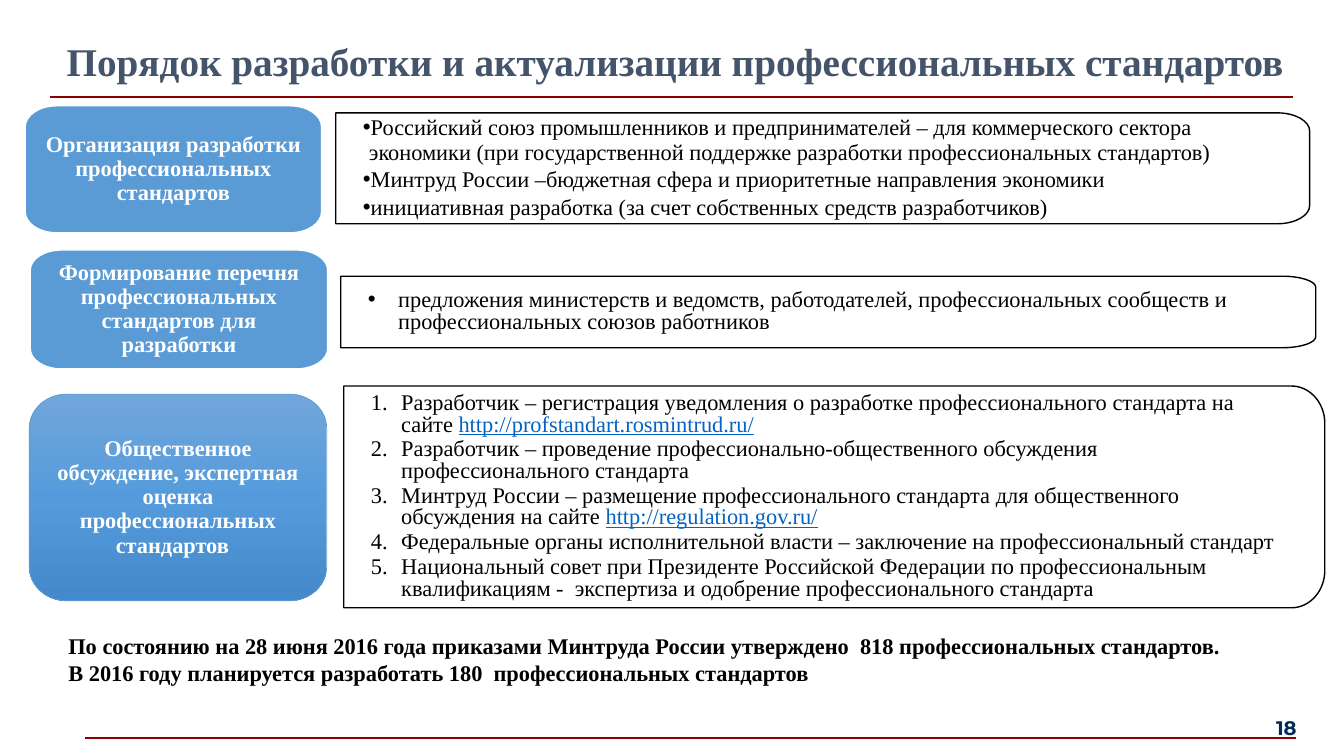
from copy import deepcopy

from lxml.etree import SubElement as Sub
from pptx import Presentation
from pptx.dml.color import RGBColor as Rgb
from pptx.enum.shapes import MSO_CONNECTOR as Conn
from pptx.enum.text import MSO_ANCHOR as Anchor, PP_ALIGN as Align
from pptx.oxml.ns import qn
from pptx.util import Inches, Pt

SERIF = "Times New Roman"
RED, BLUE, LINK = "8E0000", "5B9BD5", "0563C1"
BODY = dict(size=Pt(16), name=SERIF, bold=False)
BOLD = dict(BODY, bold=True)

CARDS = [
    ((0.25, 1.05, 2.94, 1.26), (0.31, 0.21), (0.12, 0.09), None,
     "Организация разработки профессиональных стандартов"),
    ((0.3, 2.48, 2.95, 1.18), (0.31, 0.2), (0.12, 0.09), None,
     "Формирование перечня профессиональных стандартов для разработки"),
    ((0.29, 3.91, 2.95, 2.05), (0.37, 0.34), (0.16, 0.12),
     ["71A6DB", "559BDB", "448ACA"],
     "Общественное обсуждение, экспертная оценка профессиональных стандартов  "),
]

PANELS = [
    ((3.33, 1.12, 9.66, 1.1), (0.32, 0.18), 0.06, 0.9, False, [
        ["Российский союз промышленников и предпринимателей – для коммерческого сектора "
         "экономики (при государственной поддержке разработки профессиональных стандартов)"],
        ["Минтруд России –бюджетная сфера и приоритетные направления экономики"],
        ["инициативная разработка (за счет собственных средств разработчиков)"],
    ]),
    ((3.38, 2.74, 9.67, 0.71), (0.33, 0.11), 0.3, 0.8, False, [
        ["предложения министерств и ведомств, работодателей, профессиональных сообществ "
         "и профессиональных союзов работников"],
    ]),
    ((3.41, 3.83, 9.73, 2.2), (0.33, 0.37), 0.3, 0.8, True, [
        ["Разработчик – регистрация уведомления о разработке профессионального стандарта "
         "на сайте ", "http://profstandart.rosmintrud.ru/"],
        ["Разработчик – проведение профессионально-общественного обсуждения "
         "профессионального стандарта"],
        ["Минтруд России – размещение профессионального стандарта для общественного "
         "обсуждения на сайте ", "http://regulation.gov.ru/"],
        ["Федеральные органы исполнительной власти – заключение на профессиональный стандарт"],
        ["Национальный совет при Президенте Российской Федерации по профессиональным "
         "квалификациям -  экспертиза и одобрение профессионального стандарта"],
    ]),
]

NOTES = [
    "По состоянию на 28 июня 2016 года приказами Минтруда России утверждено  "
    "818 профессиональных стандартов. ",
    "В 2016 году планируется разработать 180  профессиональных стандартов",
]


def color(code):
    return Rgb.from_string(code)


def apply(item, style):
    for key, value in style.items():
        setattr(item, key, value)


def write(para, text, style, code):
    run = para.add_run()
    run.text = text
    apply(run.font, style)
    run.font.color.rgb = color(code)


def frame(shape, pad):
    left, top, right, base = map(Inches, pad)
    apply(shape.text_frame, dict(
        word_wrap=True, vertical_anchor=Anchor.MIDDLE, margin_left=left,
        margin_top=top, margin_right=right, margin_bottom=base))
    return shape.text_frame


def label(slide, box, lines, style, code, align, pad=(0.1, 0.05, 0.1, 0.05)):
    text = frame(slide.shapes.add_textbox(*map(Inches, box)), pad)
    for i, line in enumerate(lines):
        para = text.add_paragraph() if i else text.paragraphs[0]
        para.alignment = align
        write(para, line, style, code)


def rule(slide, left, right, top):
    line = slide.shapes.add_connector(
        Conn.STRAIGHT, *map(Inches, (left, top, right, top)))
    line.line.color.rgb = color(RED)
    line.line.width = Pt(1.5)
    Sub(line._element.spPr, qn("a:effectLst"))


def blend_to(start, end, part):
    return tuple(a + (b - a) * part for a, b in zip(start, end))


def outline(box, radii, whole):
    left, top, wide, high = box
    rx, ry = radii
    spots, bends = [], []
    for x, y in [(0, 0), (1, 0), (1, 1), (0, 1)]:
        tip = (left + x * wide, top + y * high)
        if not (x or whole):
            spots.append(tip)
            continue
        flat = (tip[0] + (-rx if x else rx), tip[1])
        side = (tip[0], tip[1] + (-ry if y else ry))
        start, end = (side, flat) if x == y else (flat, side)
        bends.append(len(spots))
        spots += [start, blend_to(start, tip, 0.55), blend_to(end, tip, 0.55), end]
    return [(Inches(x), Inches(y)) for x, y in spots], bends


def bend(shape, starts):
    steps = list(next(shape._element.spPr.iter(qn("a:path"))))
    for start in starts:
        curve = Sub(steps[start].getparent(), qn("a:cubicBezTo"))
        steps[start].addnext(curve)
        for step in steps[start + 1:start + 4]:
            curve.append(step[0])
            step.getparent().remove(step)


def block(slide, box, radii, fill, edge, width, whole):
    spots, bends = outline(box, radii, whole)
    form = slide.shapes.build_freeform(*spots[0])
    form.add_line_segments(spots[1:], close=True)
    shape = form.convert_to_shape()
    bend(shape, bends)
    shape.shadow.inherit = False
    shape.fill.solid()
    shape.fill.fore_color.rgb = color(fill)
    shape.line.color.rgb = color(edge)
    shape.line.width = Pt(width)
    return shape


def shade(shape, codes):
    shape.fill.gradient()
    shape.fill.gradient_angle = 270
    stops = shape._element.spPr.find(qn("a:gradFill")).find(qn("a:gsLst"))
    stops.append(deepcopy(stops[0]))
    for i, (stop, code) in enumerate(zip(shape.fill.gradient_stops, codes)):
        stop.position = i / 2
        stop.color.rgb = color(code)


def card(slide, box, radii, pad, shades, text):
    edge, width = (BLUE, 0.5) if shades else ("FFFFFF", 1)
    shape = block(slide, box, radii, BLUE, edge, width, True)
    if shades:
        shade(shape, shades)
    para = frame(shape, pad * 2).paragraphs[0]
    apply(para, dict(alignment=Align.CENTER, line_spacing=0.9, space_after=Pt(5.6)))
    write(para, text, BOLD, "FFFFFF")


def panel(slide, box, radii, indent, space, count, items):
    shape = block(slide, box, radii, "FFFFFF", "000000", 1, False)
    text = frame(shape, (0.27, 0.21, 0.34, 0.21))
    for i, item in enumerate(items):
        para = text.add_paragraph() if i else text.paragraphs[0]
        props = para._p.get_or_add_pPr()
        props.set("marL", str(Inches(indent)))
        props.set("indent", str(-Inches(indent)))
        if count:
            Sub(props, qn("a:buFont"), typeface="+mj-lt")
            Sub(props, qn("a:buAutoNum"), type="arabicPeriod")
        else:
            Sub(props, qn("a:buFont"), typeface="Arial")
            Sub(props, qn("a:buChar"), char="•")
        apply(para, dict(level=1, alignment=Align.LEFT, line_spacing=space,
                         space_after=Pt(2.4)))
        write(para, item[0], BODY, "000000")
        for link in item[1:]:
            write(para, link, dict(BODY, underline=True), LINK)


def main():
    deck = Presentation()
    deck.slide_width, deck.slide_height = Inches(13.33), Inches(7.5)
    slide = deck.slides.add_slide(deck.slide_layouts[6])
    rule(slide, 0.84, 12.85, 7.32)
    rule(slide, 0.5, 12.82, 0.96)
    label(slide, (0.24, 0.41, 12.91, 0.39),
          ["Порядок разработки и актуализации профессиональных стандартов"],
          dict(BOLD, size=Pt(28)), "44546A", Align.CENTER)
    for row in PANELS:
        panel(slide, *row)
    for row in CARDS:
        card(slide, *row)
    label(slide, (0.58, 6.22, 12.39, 0.64), NOTES, BOLD, "000000", Align.JUSTIFY)
    label(slide, (12.27, 7.02, 0.59, 0.4), ["18"],
          dict(size=Pt(14), name="Montserrat", bold=True), "002C55",
          Align.RIGHT, (0, 0, 0, 0))
    deck.save("out.pptx")


if __name__ == "__main__":
    main()
